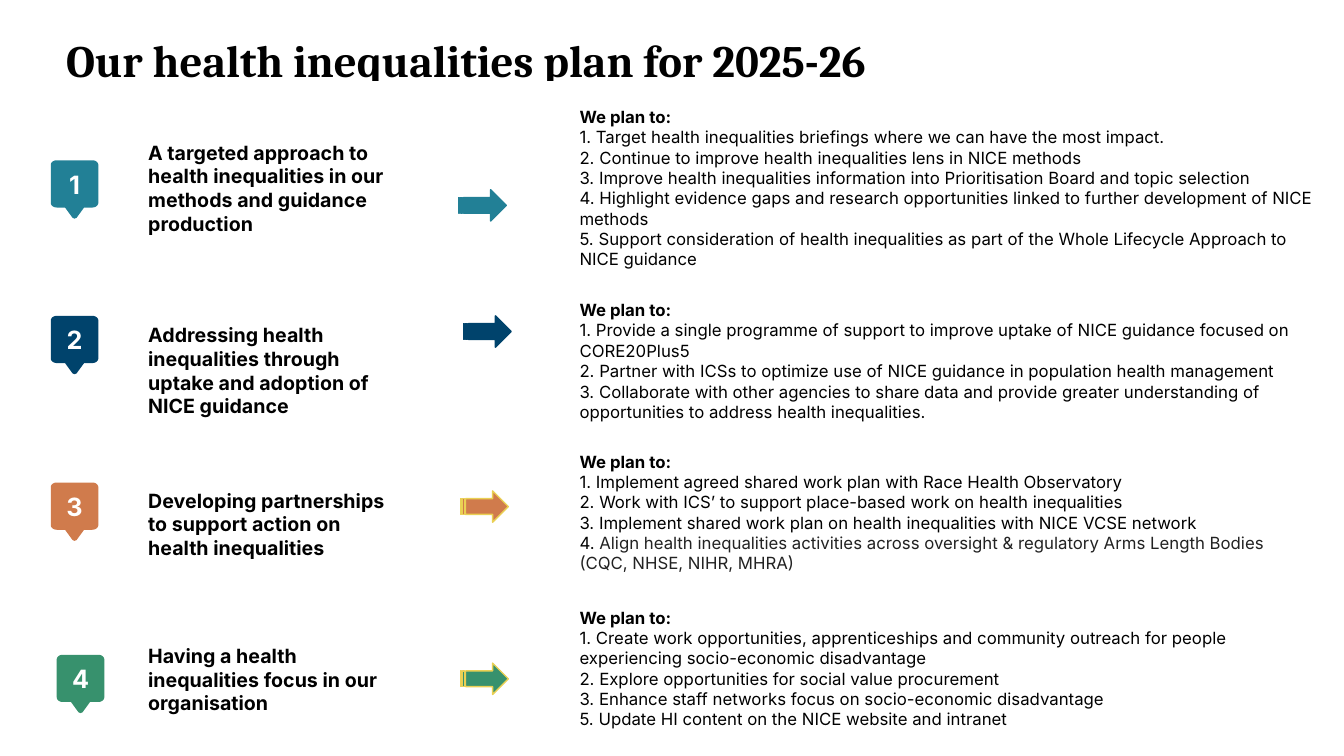
from dataclasses import dataclass
from math import cos, radians, sin

from pptx import Presentation
from pptx.dml.color import RGBColor
from pptx.enum.shapes import MSO_SHAPE as Shape
from pptx.enum.text import MSO_ANCHOR as Anchor, PP_ALIGN as Align
from pptx.util import Cm, Pt

BLACK, WHITE, GREY, YELLOW = "000000", "FFFFFF", "222222", "EAD054"
TEAL, NAVY, ORANGE, GREEN = "228096", "00436C", "D07B4C", "37916D"
COLUMN_WIDTHS = (2.49, 7.01, 1.93, 1.93, 19.02)
GOAL_COLUMN, PLAN_COLUMN = 1, 4


@dataclass
class Priority:
    goal: str
    plans: list
    row_height: float
    colour: str
    outline: str
    badge_at: tuple
    arrow_at: tuple


PRIORITIES = [
    Priority(
        "A targeted approach to health inequalities in our methods and guidance production",
        ["1. Target health inequalities briefings where we can have the most impact.",
         "2. Continue to improve health inequalities lens in NICE methods",
         "3. Improve health inequalities information into Prioritisation Board and topic selection",
         "4. Highlight evidence gaps and research opportunities linked to further development of NICE methods",
         "5. Support consideration of health inequalities as part of the Whole Lifecycle Approach to NICE guidance"],
        5.38, TEAL, TEAL, (1.28, 4.04), (11.56, 4.78)),
    Priority(
        "Addressing health inequalities through uptake and adoption of NICE guidance",
        ["1. Provide a single programme of support to improve uptake of NICE guidance focused on CORE20Plus5",
         "2. Partner with ICSs to optimize use of NICE guidance in population health management",
         "3. Collaborate with other agencies to share data and provide greater understanding of "
         "opportunities to address health inequalities."],
        3.82, NAVY, NAVY, (1.28, 7.96), (11.68, 7.96)),
    Priority(
        "Developing partnerships to support action on health inequalities",
        ["1. Implement agreed shared work plan with Race Health Observatory",
         "2. Work with ICS’ to support place-based work on health inequalities",
         "3. Implement shared work plan on health inequalities with NICE VCSE network",
         ("4. ", "Align health inequalities activities across oversight & regulatory Arms Length Bodies "
                 "(CQC, NHSE, NIHR, MHRA)")],
        3.93, ORANGE, YELLOW, (1.28, 12.16), (11.61, 12.37)),
    Priority(
        "Having a health inequalities focus in our organisation",
        ["1. Create work opportunities, apprenticeships and community outreach for people "
         "experiencing socio-economic disadvantage",
         "2. Explore opportunities for social value procurement",
         "3. Enhance staff networks focus on socio-economic disadvantage",
         "5. Update HI content on the NICE website and intranet"],
        3.89, GREEN, YELLOW, (1.43, 16.5), (11.61, 16.71)),
]


def rgb(colour):
    return RGBColor.from_string(colour)


def fill(target, colour):
    target.fill.solid()
    target.fill.fore_color.rgb = rgb(colour)


def add_run(paragraph, text, size, colour=BLACK, bold=False, family="Inter"):
    run = paragraph.add_run()
    run.text = text
    run.font.name = family
    run.font.size = Pt(size)
    run.font.bold = bold
    run.font.color.rgb = rgb(colour)


def add_label(shapes, left, top, width, height, anchor):
    frame = shapes.add_textbox(Cm(left), Cm(top), Cm(width), Cm(height)).text_frame
    frame.word_wrap = True
    frame.vertical_anchor = anchor
    return frame.paragraphs[0]


def add_title(slide, text):
    paragraph = add_label(slide.shapes, 1.42, 0.86, 23.85, 2.08, Anchor.TOP)
    paragraph.line_spacing = 0.9
    add_run(paragraph, text, 32, bold=True, family="Cambria")


def write_plans(frame, plans):
    add_run(frame.paragraphs[0], "We plan to:", 12, bold=True)
    for plan in plans:
        paragraph = frame.add_paragraph()
        parts = plan if isinstance(plan, tuple) else (plan,)
        for part, colour in zip(parts, (BLACK, GREY)):
            add_run(paragraph, part, 12, colour)


def add_priority_table(slide):
    height = sum(priority.row_height for priority in PRIORITIES)
    table = slide.shapes.add_table(
        len(PRIORITIES), len(COLUMN_WIDTHS),
        Cm(0.99), Cm(2.06), Cm(sum(COLUMN_WIDTHS)), Cm(height)).table
    table.first_row = table.horz_banding = False
    for column, width in zip(table.columns, COLUMN_WIDTHS):
        column.width = Cm(width)
    for row, priority in zip(table.rows, PRIORITIES):
        row.height = Cm(priority.row_height)
        for cell in row.cells:
            fill(cell, WHITE)
        goal = row.cells[GOAL_COLUMN]
        goal.vertical_anchor = Anchor.MIDDLE
        add_run(goal.text_frame.paragraphs[0], priority.goal, 14, bold=True)
        write_plans(row.cells[PLAN_COLUMN].text_frame, priority.plans)
    table.cell(0, PLAN_COLUMN).margin_top = Cm(0.64)


def badge_outline():
    width, body, radius_x, radius_y = 1.2, 1.19, 0.15, 0.12
    corners = [(width - radius_x, radius_y, 270), (width - radius_x, body - radius_y, 0),
               (radius_x, body - radius_y, 90), (radius_x, radius_y, 180)]
    arcs = [[(x + radius_x * cos(radians(start + turn)), y + radius_y * sin(radians(start + turn)))
             for turn in range(0, 91, 15)] for x, y, start in corners]
    pointer = [(0.84, body), (0.65, 1.45), (0.6, 1.47), (0.55, 1.45), (0.36, body)]
    return arcs[0] + arcs[1] + pointer + arcs[2] + arcs[3]


def add_badge(slide, number, priority):
    left, top = priority.badge_at
    badge = slide.shapes.add_group_shape()
    points = [(Cm(x), Cm(y)) for x, y in badge_outline()]
    builder = badge.shapes.build_freeform(*points[0])
    builder.add_line_segments(points[1:], close=True)
    pin = builder.convert_to_shape(Cm(left), Cm(top))
    pin.shadow.inherit = False
    fill(pin, priority.colour)
    pin.line.fill.background()
    paragraph = add_label(badge.shapes, left, top + 0.09, 1.2, 1.02, Anchor.MIDDLE)
    paragraph.alignment = Align.CENTER
    add_run(paragraph, str(number), 18, WHITE, bold=True)


def add_arrow(slide, priority):
    left, top = priority.arrow_at
    arrow = slide.shapes.add_shape(
        Shape.STRIPED_RIGHT_ARROW, Cm(left), Cm(top), Cm(1.2), Cm(0.79))
    arrow.shadow.inherit = False
    fill(arrow, priority.colour)
    arrow.line.color.rgb = rgb(priority.outline)
    arrow.line.width = Pt(1)


def main():
    deck = Presentation()
    deck.slide_width, deck.slide_height = Cm(33.87), Cm(19.05)
    slide = deck.slides.add_slide(deck.slide_layouts[6])
    add_title(slide, "Our health inequalities plan for 2025-26")
    add_priority_table(slide)
    for number, priority in enumerate(PRIORITIES, 1):
        add_badge(slide, number, priority)
        add_arrow(slide, priority)
    deck.save("out.pptx")


if __name__ == "__main__":
    main()
